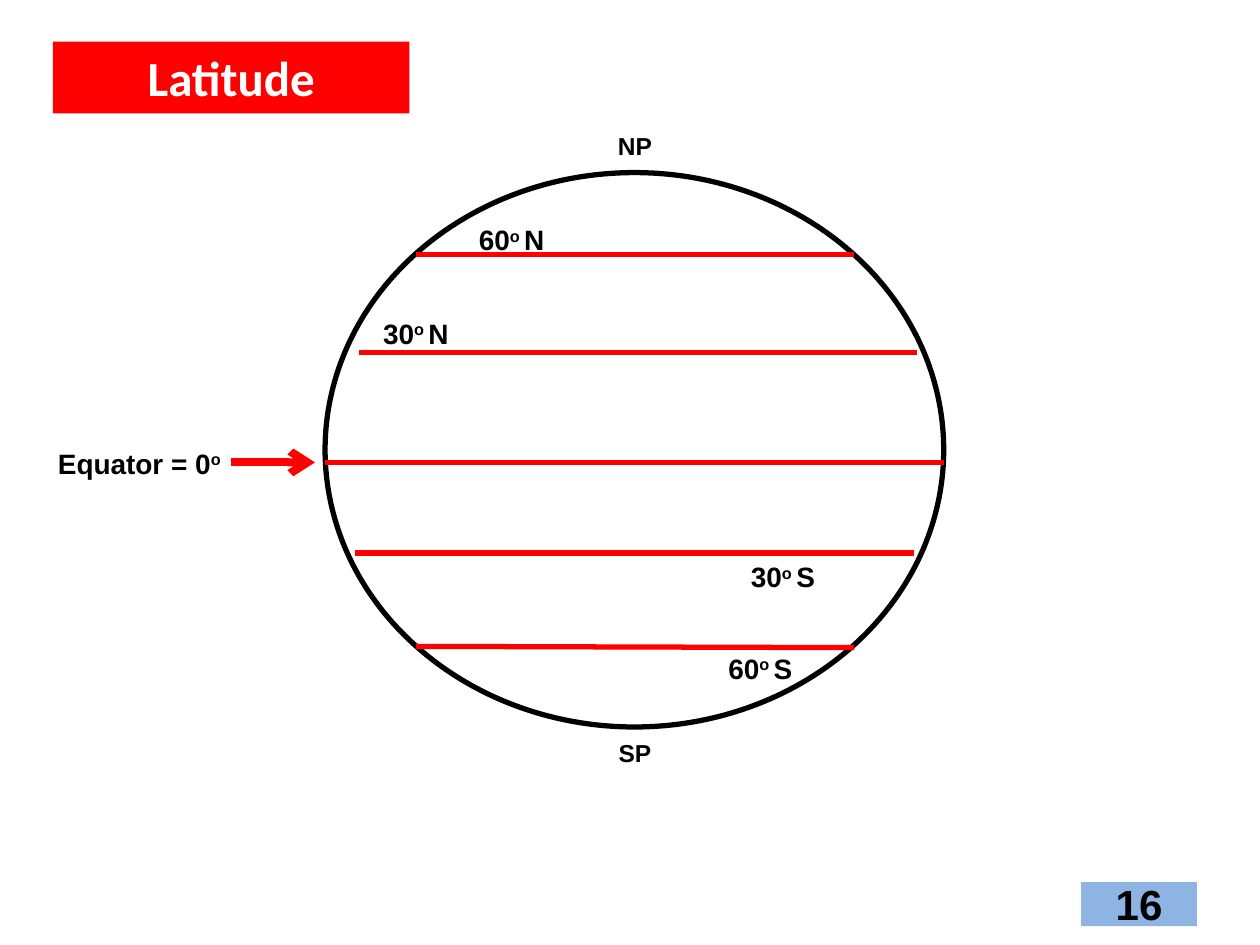
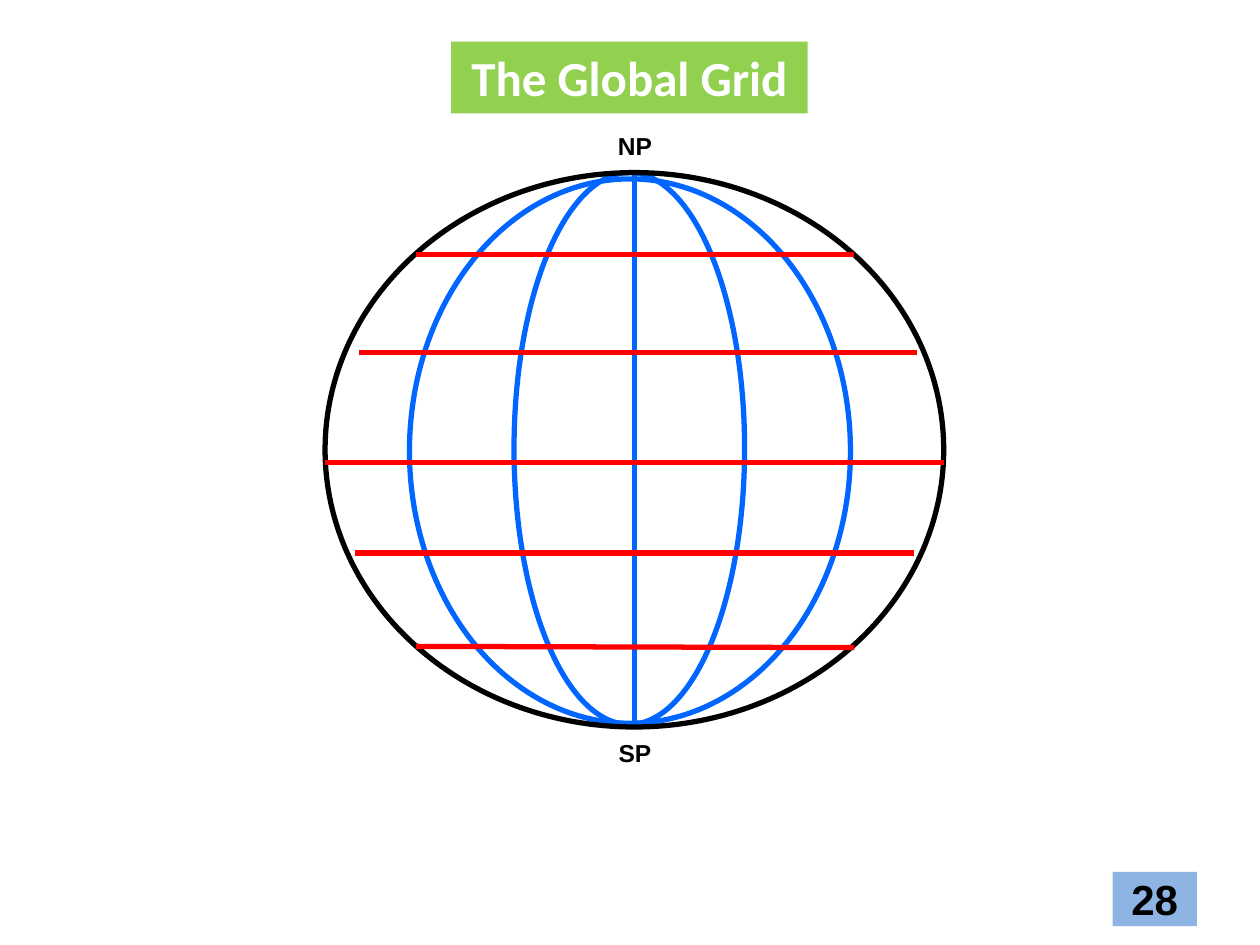
from lxml.etree import SubElement
from pptx import Presentation
from pptx.dml.color import RGBColor
from pptx.enum.shapes import MSO_CONNECTOR, MSO_SHAPE
from pptx.enum.text import MSO_ANCHOR, MSO_AUTO_SIZE, PP_ALIGN
from pptx.oxml.ns import qn
from pptx.util import Inches, Pt

BLACK = RGBColor(0x00, 0x00, 0x00)
WHITE = RGBColor(0xFF, 0xFF, 0xFF)
RED = RGBColor(0xFF, 0x00, 0x00)
GREEN = RGBColor(0x92, 0xD0, 0x50)
BLUE = RGBColor(0x00, 0x66, 0xFF)
PALE = RGBColor(0x8E, 0xB4, 0xE3)

GLOBE = (2.58, 1.37, 4.91, 4.4)
LINES = [
    (0, 2.3, 4.91, 2.3),
    (0.72, 0.65, 4.2, 0.65),
    (0.72, 3.76, 4.2, 3.77),
    (0.24, 3.02, 4.67, 3.02),
    (0.27, 1.43, 4.7, 1.43),
]
MARKS = [
    ("60", "N", 1.18, 0.36),
    ("30", "N", 0.42, 1.1),
    ("30", "S", 3.34, 3.03),
    ("60", "S", 3.16, 3.76),
]


def write(shape, *parts, size=16, font="Arial", color=BLACK,
          align=PP_ALIGN.LEFT, anchor=MSO_ANCHOR.TOP, pad=None, after=0):
    frame = shape.text_frame
    frame.word_wrap = True
    frame.auto_size = MSO_AUTO_SIZE.NONE
    frame.vertical_anchor = anchor
    if pad is not None:
        frame.margin_left = frame.margin_right = Inches(pad)
        frame.margin_top = frame.margin_bottom = Inches(pad)
    para = frame.paragraphs[0]
    para.alignment = align
    para.space_after = Pt(after)
    for part in parts:
        run = para.add_run()
        run.text = part
        run.font.name = font
        run.font.size = Pt(size)
        run.font.bold = True
        run.font.color.rgb = color
        if part.strip() == "o":
            run._r.get_or_add_rPr().set("baseline", "30000")


def label(slide, box, *parts, **style):
    text = slide.shapes.add_textbox(*map(Inches, box))
    write(text, *parts, pad=0.04, after=10, **style)


def rule(slide, x1, y1, x2, y2, color, width=3, arrow=False):
    line = slide.shapes.add_connector(
        MSO_CONNECTOR.STRAIGHT, *map(Inches, (x1, y1, x2, y2)))
    line.line.color.rgb = color
    line.line.width = Pt(width)
    if arrow:
        SubElement(line.line._get_or_add_ln(), qn("a:tailEnd"), type="arrow")
    SubElement(line._element.spPr, qn("a:effectLst"))


def ring(slide, box, color):
    oval = slide.shapes.add_shape(MSO_SHAPE.OVAL, *map(Inches, box))
    oval.shadow.inherit = False
    oval.fill.background()
    oval.line.color.rgb = color
    oval.line.width = Pt(3)


def title(slide, left, text, fill):
    head = slide.shapes.title
    head.left, head.top, head.width, head.height = map(
        Inches, (left, 0.33, 2.83, 0.57))
    head.fill.solid()
    head.fill.fore_color.rgb = fill
    write(head, text, size=28, font="Calibri", color=WHITE,
          align=PP_ALIGN.CENTER)


def number(slide, box, text):
    tag = slide.shapes.add_shape(MSO_SHAPE.RECTANGLE, *map(Inches, box))
    tag.shadow.inherit = False
    tag.fill.solid()
    tag.fill.fore_color.rgb = PALE
    tag.line.fill.background()
    write(tag, text, size=24, align=PP_ALIGN.CENTER, anchor=MSO_ANCHOR.MIDDLE)


def globe(slide, box):
    left, top, width, height = box
    ring(slide, box, BLACK)
    for pole, y in (("NP", top - 0.37), ("SP", top + height + 0.05)):
        label(slide, (left + width / 2 - 0.43, y, 0.87, 0.39), pole,
              size=14, align=PP_ALIGN.CENTER)
    for x1, y1, x2, y2 in LINES:
        rule(slide, left + x1, top + y1, left + x2, top + y2, RED)


def names(slide, box):
    left, top = box[:2]
    for deg, side, x, y in MARKS:
        label(slide, (left + x, top + y, 1.16, 0.43), deg, "o ", side)
    label(slide, (left - 2.16, top + 2.13, 1.67, 0.39), "Equator = 0", "o")
    rule(slide, left - 0.75, top + 2.3, left - 0.08, top + 2.3, RED,
         width=4.5, arrow=True)


def arcs(slide, box):
    left, top, width, height = box
    mid = left + width / 2
    rule(slide, mid, top + 0.01, mid, top + height + 0.01, BLUE)
    for x, y, wide, high in ((1.5, 0, 1.83, 4.38), (0.67, 0.05, 3.5, 4.32)):
        ring(slide, (left + x, top + y, wide, high), BLUE)


def main():
    deck = Presentation()
    deck.slide_width, deck.slide_height = Inches(10), Inches(7.5)
    plain = deck.slide_layouts[5]

    slide = deck.slides.add_slide(plain)
    title(slide, 0.42, "Latitude", RED)
    globe(slide, GLOBE)
    names(slide, GLOBE)
    number(slide, (8.58, 7, 0.92, 0.35), "16")

    slide = deck.slides.add_slide(plain)
    title(slide, 3.58, "The Global Grid", GREEN)
    arcs(slide, GLOBE)
    globe(slide, GLOBE)
    number(slide, (8.83, 6.92, 0.67, 0.43), "28")

    deck.save("out.pptx")


if __name__ == "__main__":
    main()
